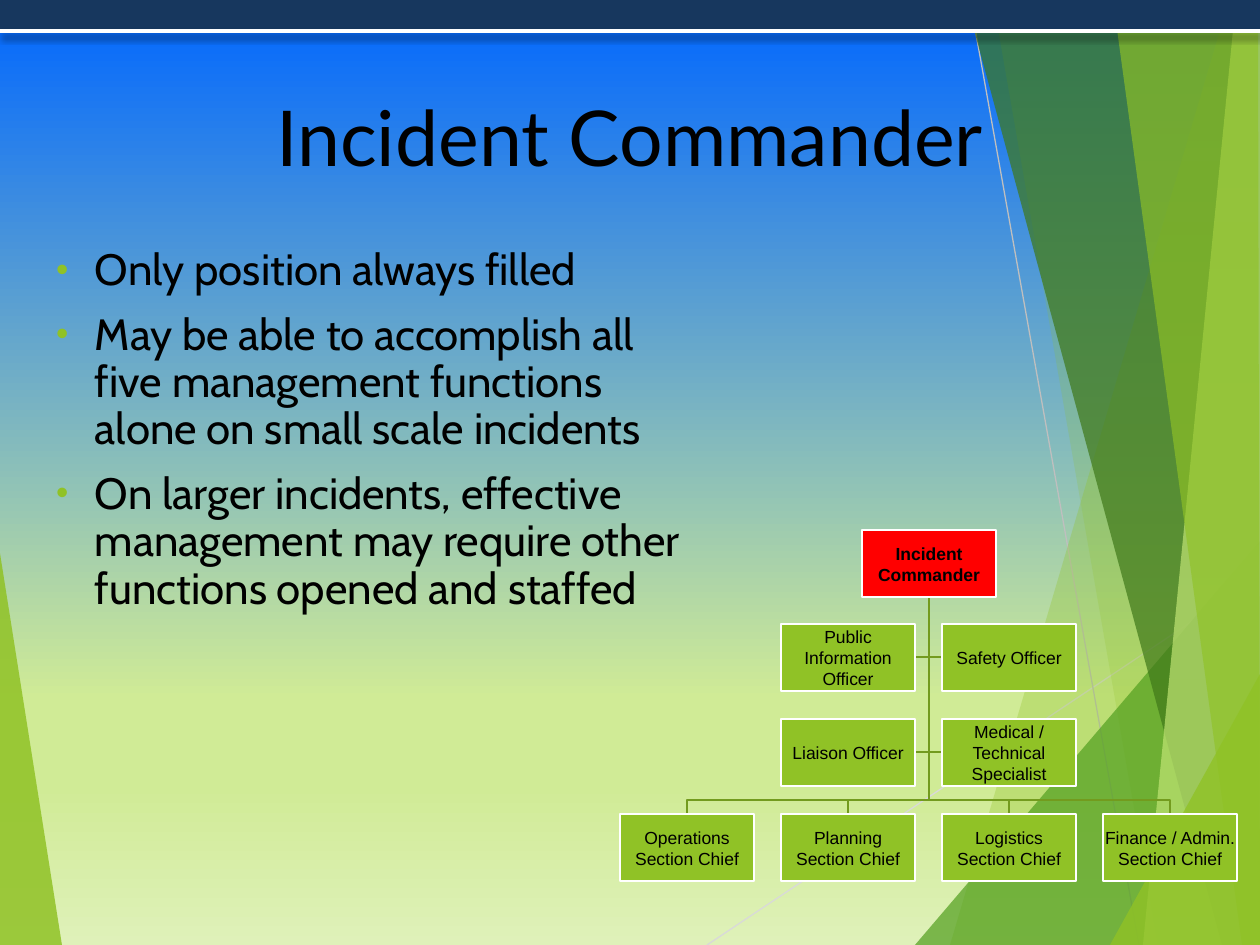
from lxml import etree
from pptx import Presentation
from pptx.dml.color import RGBColor
from pptx.enum.shapes import MSO_CONNECTOR, MSO_SHAPE
from pptx.enum.text import MSO_ANCHOR, PP_ALIGN
from pptx.oxml.ns import qn
from pptx.util import Pt

PX = 914400 / 126
WIDTH, HEIGHT = 1260, 945
RECTANGLE = MSO_SHAPE.RECTANGLE
STRAIGHT = MSO_CONNECTOR.STRAIGHT
LEFT, CENTER = PP_ALIGN.LEFT, PP_ALIGN.CENTER
TOP, MIDDLE = MSO_ANCHOR.TOP, MSO_ANCHOR.MIDDLE

GREEN, BRANCH_GREEN, NAVY = "90C226", "739B1E", "17375E"
BLACK, WHITE, RED = "000000", "FFFFFF", "FF0000"

BACKGROUND_STOPS = [(0, "0066FF"), (74, "D0EB96"), (83, "D0EB96"), (100, "DFF1B9")]
LEFT_FACET = ([(0, 553), (62, 945), (0, 945)], GREEN, 85)
RAYS = [((707, 945), (1260, 576), "D9D9D9"), ((970, 0), (1139, 945), "BFBFBF")]
RIGHT_FACETS = [
    ([(1229, 0), (950, 945), (1260, 945), (1260, 0)], GREEN, 30),
    ([(993, 0), (1158, 945), (1260, 945), (1260, 0)], GREEN, 20),
    ([(915, 945), (1260, 541), (1260, 945)], "54A021", 72),
    ([(966, 0), (1222, 945), (1260, 945), (1260, 0)], "3F7819", 70),
    ([(1236, 0), (1143, 945), (1260, 945), (1260, 0)], "C0E474", 70),
    ([(1113, 0), (1242, 945), (1260, 945), (1258, 0)], GREEN, 65),
    ([(1110, 945), (1260, 674), (1260, 945)], GREEN, 80),
]
BULLETS = [
    "Only position always filled",
    "May be able to accomplish all five management functions alone on small scale incidents",
    "On larger incidents, effective management may require other functions opened and staffed",
]
# (row, column, lines of the label)
STAFF = [
    (1, 1, ["Public Information", "Officer"]),
    (1, 2, ["Safety Officer"]),
    (2, 1, ["Liaison Officer"]),
    (2, 2, ["Medical / Technical", "Specialist"]),
]
SECTIONS = ["Operations", "Planning", "Logistics", "Finance / Admin."]


def emu(*lengths):
    return [round(length * PX) for length in lengths]


def color(hex_string):
    return RGBColor.from_string(hex_string)


def add_element(parent, tag, **attributes):
    element = etree.SubElement(parent, qn(tag))
    for name, value in attributes.items():
        element.set(name, str(value))
    return element


def add_shadow(properties, hex_string, alpha, **geometry):
    shadow = add_element(add_element(properties, "a:effectLst"), "a:outerShdw", **geometry)
    tint = add_element(shadow, "a:srgbClr", val=hex_string)
    add_element(tint, "a:alpha", val=alpha * 1000)


def write_text(shape, lines, font="Arial", size=10, bold=False, align=CENTER,
               anchor=MIDDLE, insets=(1, 1), line_spacing=None, space_before=None):
    frame = shape.text_frame
    frame.word_wrap = True
    frame.vertical_anchor = anchor
    frame.margin_left, frame.margin_top = emu(*insets)
    frame.margin_right, frame.margin_bottom = emu(*insets)
    for index, line in enumerate(lines):
        paragraph = frame.add_paragraph() if index else frame.paragraphs[0]
        paragraph.alignment = align
        if line_spacing:
            paragraph.line_spacing = line_spacing
        if space_before:
            paragraph.space_before = Pt(space_before)
        run = paragraph.add_run()
        run.text = line
        run.font.name = font
        run.font.size = Pt(size)
        run.font.bold = bold
        run.font.color.rgb = color(BLACK)
    return frame.paragraphs


def add_box(slide, box, fill, line=None):
    shape = slide.shapes.add_shape(RECTANGLE, *emu(*box))
    shape.shadow.inherit = False
    shape.fill.solid()
    shape.fill.fore_color.rgb = color(fill)
    if line:
        shape.line.color.rgb = color(line)
        shape.line.width = Pt(1.5)
    else:
        shape.line.fill.background()
    return shape


def add_line(slide, start, end, hex_string, width):
    line = slide.shapes.add_connector(STRAIGHT, *emu(*start, *end))
    line.line.color.rgb = color(hex_string)
    line.line.width = Pt(width)
    return line


def add_outline(slide, points, close):
    builder = slide.shapes.build_freeform(*points[0], scale=PX)
    builder.add_line_segments(points[1:], close=close)
    shape = builder.convert_to_shape()
    shape.shadow.inherit = False
    return shape


def add_facet(slide, points, fill, opacity):
    facet = add_outline(slide, points, close=True)
    facet.fill.solid()
    facet.fill.fore_color.rgb = color(fill)
    facet.line.fill.background()
    tint = facet.element.spPr.find(qn("a:solidFill")).find(qn("a:srgbClr"))
    add_element(tint, "a:alpha", val=opacity * 1000)


def add_branch(slide, points):
    branch = add_outline(slide, points, close=False)
    branch.fill.background()
    branch.line.color.rgb = color(BRANCH_GREEN)
    branch.line.width = Pt(1.5)


def paint_background(slide):
    fill = slide.background.fill
    fill.gradient()
    fill.gradient_angle = 270
    stops = next(slide.element.iter(qn("a:gsLst")))
    for stop in list(stops):
        stops.remove(stop)
    for position, hex_string in BACKGROUND_STOPS:
        stop = add_element(stops, "a:gs", pos=position * 1000)
        add_element(stop, "a:srgbClr", val=hex_string)


def draw_backdrop(slide):
    add_facet(slide, *LEFT_FACET)
    for start, end, hex_string in RAYS:
        ray = add_line(slide, start, end, hex_string, 0.75)
        add_element(ray.element.spPr, "a:effectLst")
    for facet in RIGHT_FACETS:
        add_facet(slide, *facet)


def draw_header_band(slide, box):
    left, top, width, height = box
    add_box(slide, box, NAVY)
    bottom = top + height
    rule = add_line(slide, (left + width, bottom), (left, bottom), WHITE, 2)
    add_shadow(rule.element.spPr, BLACK, 40, blurRad=Pt(4), dist=Pt(3),
               dir=5400000, rotWithShape=0)


def draw_title(slide, box, title):
    shape = slide.shapes.add_textbox(*emu(*box))
    paragraph = write_text(shape, [title], font="Lato", size=44, anchor=TOP, insets=(13, 6))[0]
    properties = paragraph.runs[0].font.fill  # the fill has to precede the effect
    properties.solid()
    properties.fore_color.rgb = color(BLACK)
    run_properties = next(paragraph.runs[0]._r.iter(qn("a:rPr")))
    add_shadow(run_properties, "C0C0C0", 100, dist=Pt(2), dir=2700000)
    effects = run_properties.find(qn("a:effectLst"))
    run_properties.find(qn("a:solidFill")).addnext(effects)


def draw_bullets(slide, box, lines):
    shape = slide.shapes.add_textbox(*emu(*box))
    paragraphs = write_text(shape, lines, font="Cabin", size=25, align=LEFT, anchor=TOP,
                            insets=(13, 6), line_spacing=0.9, space_before=10)
    indent, hanging = emu(40, -39)
    for paragraph in paragraphs:
        properties = paragraph._p.get_or_add_pPr()
        properties.set("marL", str(indent))
        properties.set("indent", str(hanging))
        add_element(add_element(properties, "a:buClr"), "a:srgbClr", val=GREEN)
        add_element(properties, "a:buSzPct", val=80000)
        add_element(properties, "a:buFont", typeface="Arial")
        add_element(properties, "a:buChar", char="•")


def draw_organization_chart(slide, box):
    """Four rows of boxes on a four-column grid, joined to one trunk."""
    left, top, width, height = box
    box_width, box_height = 134, 67
    trunk = left + width // 2 + 1
    trunk_top = top + box_height
    bus = top + height - box_height - 14

    def cell(row, column):
        return (left + (width - box_width) * column // 3,
                top + (height - box_height) * row // 3)

    for row, column, _ in STAFF:
        x, y = cell(row, column)
        middle = y + box_height // 2
        edge = x + box_width if column == 1 else x
        add_branch(slide, [(trunk, trunk_top), (trunk, middle), (edge, middle)])
    for column in range(len(SECTIONS)):
        x, y = cell(3, column)
        center = x + box_width // 2
        add_branch(slide, [(trunk, trunk_top), (trunk, bus), (center, bus), (center, y)])

    commander = add_box(slide, (trunk - box_width // 2, top, box_width, box_height), RED, WHITE)
    write_text(commander, ["Incident Commander"], bold=True)
    sections = [(3, column, [name, "Section Chief"]) for column, name in enumerate(SECTIONS)]
    for row, column, lines in sections + STAFF:
        position = cell(row, column)
        write_text(add_box(slide, (*position, box_width, box_height), GREEN, WHITE), lines)


def main():
    presentation = Presentation()
    presentation.slide_width, presentation.slide_height = emu(WIDTH, HEIGHT)
    slide = presentation.slides.add_slide(presentation.slide_layouts[6])
    paint_background(slide)
    draw_backdrop(slide)
    draw_header_band(slide, (0, 0, WIDTH, 31))
    draw_title(slide, (63, 84, 1134, 158), "Incident Commander")
    draw_bullets(slide, (42, 242, 661, 624), BULLETS)
    draw_organization_chart(slide, (620, 530, 617, 351))
    presentation.save("out.pptx")


if __name__ == "__main__":
    main()
